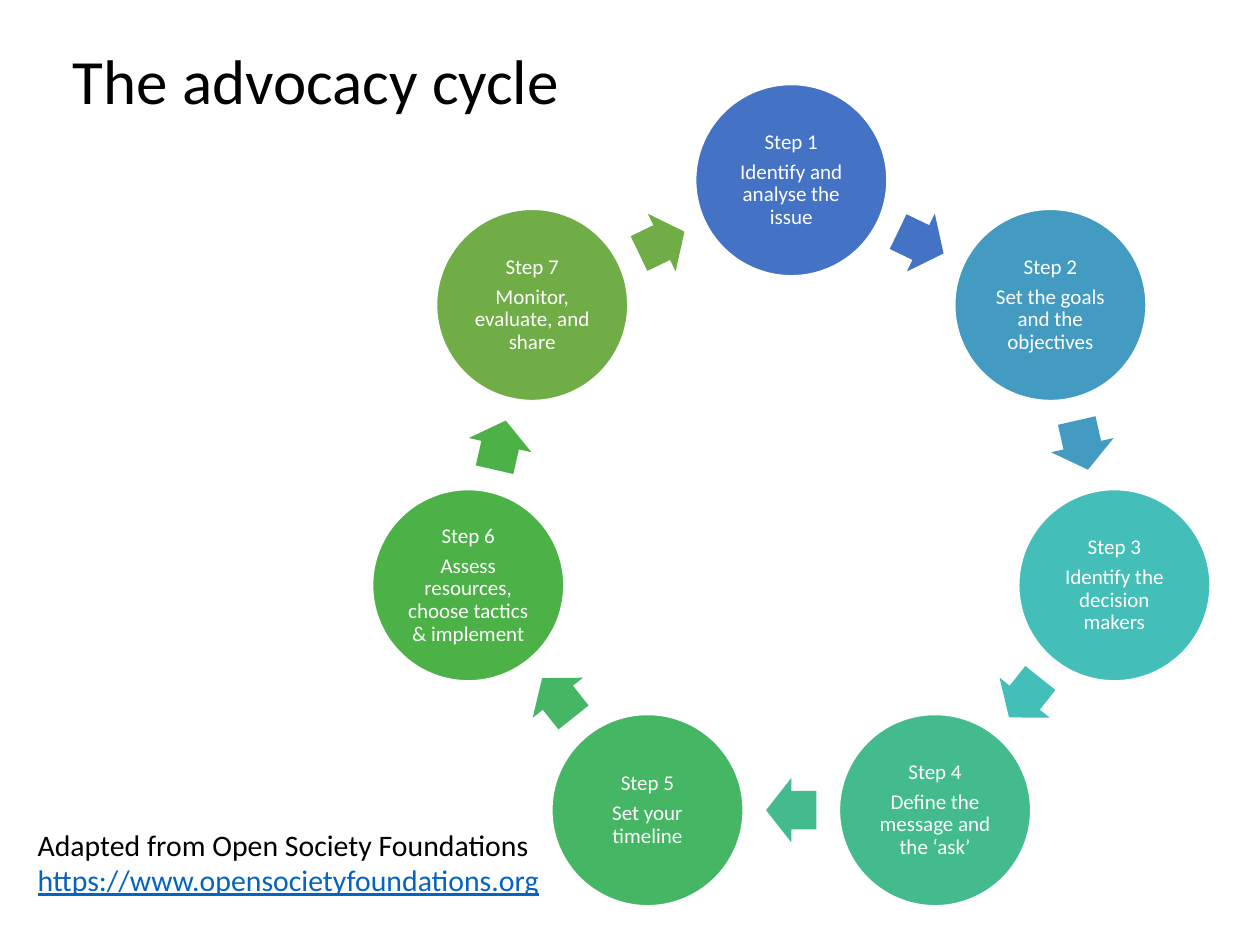
from math import cos, pi, radians, sin

from pptx import Presentation
from pptx.dml.color import RGBColor
from pptx.enum.shapes import MSO_SHAPE
from pptx.enum.text import MSO_ANCHOR, PP_ALIGN
from pptx.util import Inches, Pt

ELLIPSE = MSO_SHAPE.OVAL
ARROW = MSO_SHAPE.RIGHT_ARROW
MIDDLE = MSO_ANCHOR.MIDDLE
CENTER = PP_ALIGN.CENTER

FONT = "Calibri"
COLORS = {"text": "000000", "white": "FFFFFF", "link": "0563C1"}
STEPS = [
    ("Identify and analyse the issue", "4472C4"),
    ("Set the goals and the objectives", "449BC1"),
    ("Identify the decision makers", "43BEB9"),
    ("Define the message and the ‘ask’", "43BB8D"),
    ("Set your timeline", "45B664"),
    ("Assess resources, choose tactics & implement", "4CB146"),
    ("Monitor, evaluate, and share", "70AD47"),
]
CIRCLE_SIZE = 1.52
ARROW_WIDTH, ARROW_HEIGHT = 0.4, 0.51


def add_run(paragraph, text, size, color, underline=None):
    run = paragraph.add_run()
    run.text = text
    run.font.name = FONT
    run.font.size = Pt(size)
    run.font.color.rgb = RGBColor.from_string(color)
    run.font.underline = underline


def add_centered_shape(slide, kind, center_x, center_y, width, height, color):
    shape = slide.shapes.add_shape(
        kind, Inches(center_x - width / 2), Inches(center_y - height / 2),
        Inches(width), Inches(height))
    shape.shadow.inherit = False
    shape.fill.solid()
    shape.fill.fore_color.rgb = RGBColor.from_string(color)
    return shape


def add_text_box(slide, left, top, width, height):
    text_box = slide.shapes.add_textbox(
        Inches(left), Inches(top), Inches(width), Inches(height))
    text_box.text_frame.word_wrap = True
    return text_box.text_frame


def add_title(slide, left, top, width, height):
    frame = add_text_box(slide, left, top, width, height)
    frame.vertical_anchor = MIDDLE
    paragraph = frame.paragraphs[0]
    paragraph.line_spacing = 0.9
    add_run(paragraph, "The advocacy cycle", 36, COLORS["text"])


def add_step(slide, center_x, center_y, number, description, color):
    circle = add_centered_shape(
        slide, ELLIPSE, center_x, center_y, CIRCLE_SIZE, CIRCLE_SIZE, color)
    circle.line.color.rgb = RGBColor.from_string(COLORS["white"])
    circle.line.width = Pt(1)

    frame = circle.text_frame
    frame.word_wrap = True
    frame.vertical_anchor = MIDDLE
    frame.margin_left = frame.margin_right = Inches(0.02)
    frame.margin_top = frame.margin_bottom = Inches(0.02)
    for index, text in enumerate((f"Step {number}", description)):
        paragraph = frame.add_paragraph() if index else frame.paragraphs[0]
        paragraph.alignment = CENTER
        paragraph.line_spacing = 0.9
        paragraph.space_after = Pt(4.2)
        add_run(paragraph, text, 12, COLORS["white"])


def add_arrow(slide, center_x, center_y, rotation, color):
    arrow = add_centered_shape(
        slide, ARROW, center_x, center_y, ARROW_WIDTH, ARROW_HEIGHT, color)
    arrow.line.fill.background()
    arrow.adjustments[0] = 0.6
    arrow.adjustments[1] = 0.5
    arrow.rotation = rotation


def add_cycle(slide, center_x, center_y, radius):
    step_angle = 360 / len(STEPS)
    # Arrows sit halfway between neighbouring circles
    arrow_radius = radius * cos(pi / len(STEPS))

    def point(angle, distance):
        return (center_x + distance * sin(radians(angle)),
                center_y - distance * cos(radians(angle)))

    for index, (description, color) in enumerate(STEPS):
        angle = index * step_angle
        arrow_angle = angle + step_angle / 2
        add_step(slide, *point(angle, radius), index + 1, description, color)
        add_arrow(slide, *point(arrow_angle, arrow_radius), arrow_angle, color)


def add_source(slide, left, top, width, height):
    paragraph = add_text_box(slide, left, top, width, height).paragraphs[0]
    add_run(paragraph, "Adapted from Open Society Foundations", 17, COLORS["text"])
    paragraph.add_line_break()
    add_run(paragraph, "https://www.opensocietyfoundations.org", 17,
            COLORS["link"], underline=True)


def main():
    presentation = Presentation()
    presentation.slide_width = Inches(10)
    presentation.slide_height = Inches(7.5)
    slide = presentation.slides.add_slide(presentation.slide_layouts[6])

    add_title(slide, 0.48, 0.17, 7.78, 0.99)
    add_cycle(slide, 6.28, 4.06, 2.63)
    add_source(slide, 0.2, 6.51, 4.46, 0.67)

    presentation.save("out.pptx")


if __name__ == "__main__":
    main()
